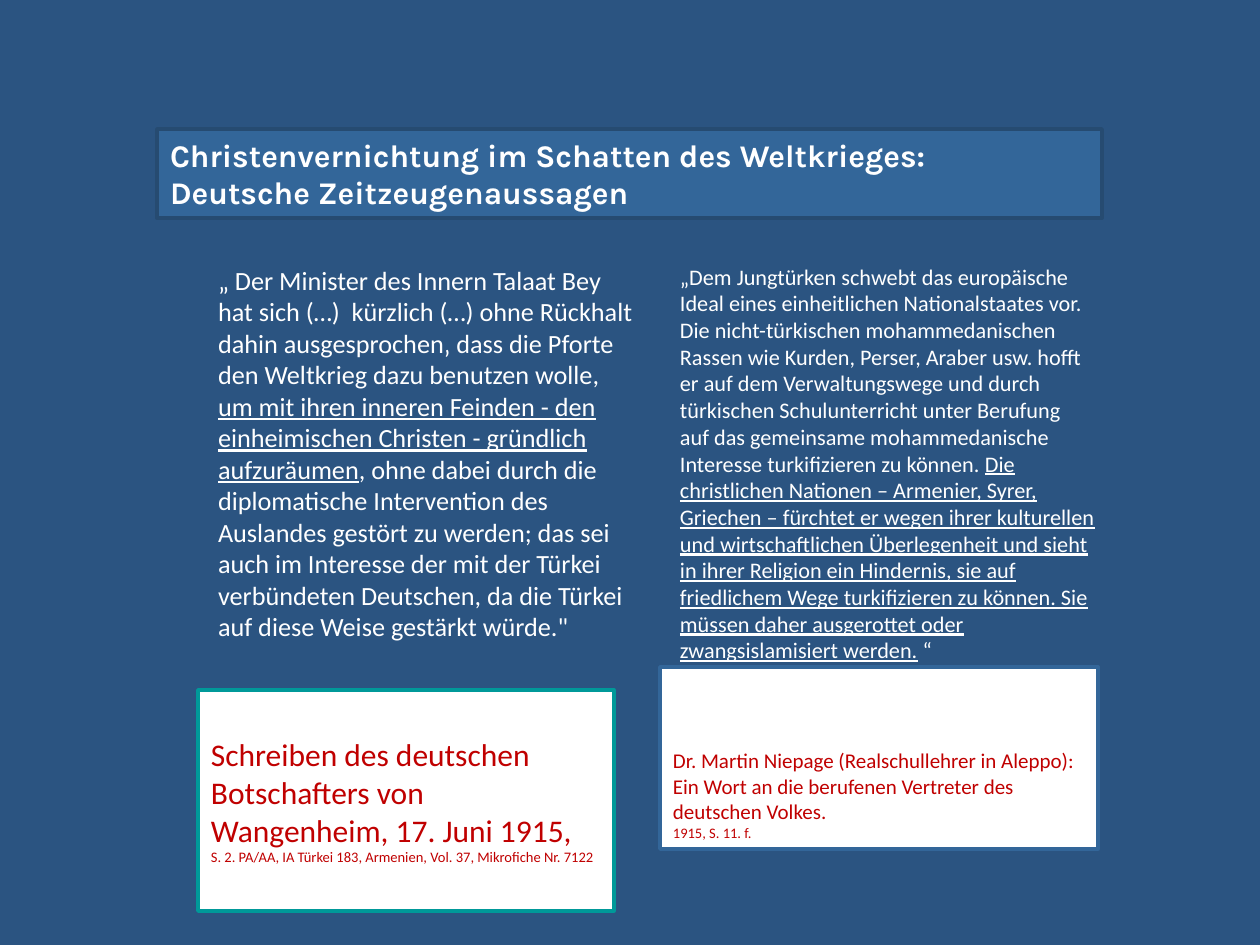
from pptx import Presentation, util as u
from pptx.dml.color import RGBColor
from pptx.enum import shapes, text

PX = 914400 / 126
WHITE, RED = "FFFFFF", "C00000"

TITLE = [
    [("Christenvernichtung im Schatten des Weltkrieges:", {})],
    [("Deutsche Zeitzeugenaussagen", {})],
]
UNDERLINED = {"underline": True}

QUOTES = [
    {
        "box": (205, 258, 446, 571),
        "size": 15,
        "runs": [
            ("„ Der Minister des Innern Talaat Bey hat sich (…)  kürzlich (…) ohne Rückhalt "
             "dahin ausgesprochen‚ dass die Pforte den Weltkrieg dazu benutzen wolle, ", {}),
            ("um mit ihren inneren Feinden - den einheimischen Christen - gründlich "
             "aufzuräumen", UNDERLINED),
            (", ohne dabei durch die diplomatische Intervention des Auslandes gestört zu "
             "werden; das sei auch im Interesse der mit der Türkei verbündeten Deutschen, "
             "da die Türkei auf diese Weise gestärkt würde.\"", {}),
        ],
    },
    {
        "box": (667, 257, 440, 571),
        "size": 12.7,
        "runs": [
            ("„Dem Jungtürken schwebt das europäische Ideal eines einheitlichen "
             "Nationalstaates vor. Die nicht-türkischen mohammedanischen Rassen wie Kurden, "
             "Perser, Araber usw. hofft er auf dem Verwaltungswege und durch türkischen "
             "Schulunterricht unter Berufung auf das gemeinsame mohammedanische Interesse "
             "turkifizieren zu können. ", {}),
            ("Die christlichen Nationen – Armenier, Syrer, Griechen – fürchtet er wegen "
             "ihrer kulturellen und wirtschaftlichen Überlegenheit und sieht in ihrer "
             "Religion ein Hindernis, sie auf friedlichem Wege turkifizieren zu können. "
             "Sie müssen daher ausgerottet oder zwangsislamisiert werden.", UNDERLINED),
            (" “", {}),
        ],
    },
]

SOURCES = [
    {
        "box": (198, 690, 416, 221),
        "border": "009999",
        "size": 18,
        "top": 45,
        "origin": "Schreiben des deutschen Botschafters von Wangenheim, 17. Juni 1915,",
        "reference": "S. 2. PA/AA, IA Türkei 183, Armenien, Vol. 37, Mikrofiche Nr. 7122",
    },
    {
        "box": (660, 667, 438, 182),
        "border": "336699",
        "size": 12,
        "top": 81,
        "origin": "Dr. Martin Niepage (Realschullehrer in Aleppo): Ein Wort an die "
                  "berufenen Vertreter des deutschen Volkes.",
        "reference": "1915, S. 11. f.",
    },
]


def px(*lengths):
    return [u.Emu(round(length * PX)) for length in lengths]


def color(value):
    return RGBColor.from_string(value)


def paint(panel, fill, border):
    panel.fill.solid()
    panel.fill.fore_color.rgb = color(fill)
    panel.line.color.rgb = color(border)
    panel.line.width = u.Pt(2)


def write(holder, paragraphs, size, ink, font="Calibri", bold=False, top=6,
          anchor=text.MSO_ANCHOR.TOP):
    frame = holder.text_frame
    frame.word_wrap = True
    frame.auto_size = text.MSO_AUTO_SIZE.NONE
    frame.vertical_anchor = anchor
    frame.margin_left, frame.margin_right, frame.margin_top, frame.margin_bottom = px(
        13, 12, top, 6)
    for index, runs in enumerate(paragraphs):
        paragraph = frame.paragraphs[0] if index == 0 else frame.add_paragraph()
        paragraph.alignment = text.PP_ALIGN.LEFT
        for words, style in runs:
            run = paragraph.add_run()
            run.text = words
            run.font.name = font
            run.font.size = u.Pt(style.get("size", size))
            run.font.bold = bold
            run.font.underline = style.get("underline", False)
            run.font.color.rgb = color(ink)


def main():
    deck = Presentation()
    deck.slide_width, deck.slide_height = px(1260, 945)
    slide = deck.slides.add_slide(deck.slide_layouts[5])
    slide.background.fill.solid()
    slide.background.fill.fore_color.rgb = color("2B5481")

    heading = slide.shapes.title
    heading.left, heading.top, heading.width, heading.height = px(157, 129, 945, 89)
    paint(heading, "336699", "264B71")
    write(heading, TITLE, 18, WHITE, font="Karla", bold=True,
          anchor=text.MSO_ANCHOR.MIDDLE)

    for quote in QUOTES:
        passage = slide.shapes.add_textbox(*px(*quote["box"]))
        write(passage, [quote["runs"]], quote["size"], WHITE)

    for source in SOURCES:
        panel = slide.shapes.add_shape(shapes.MSO_SHAPE.RECTANGLE, *px(*source["box"]))
        panel.shadow.inherit = False
        paint(panel, WHITE, source["border"])
        lines = [[(source["origin"], {})], [(source["reference"], {"size": 8.3})]]
        write(panel, lines, source["size"], RED, top=source["top"])

    deck.save("out.pptx")


if __name__ == "__main__":
    main()
